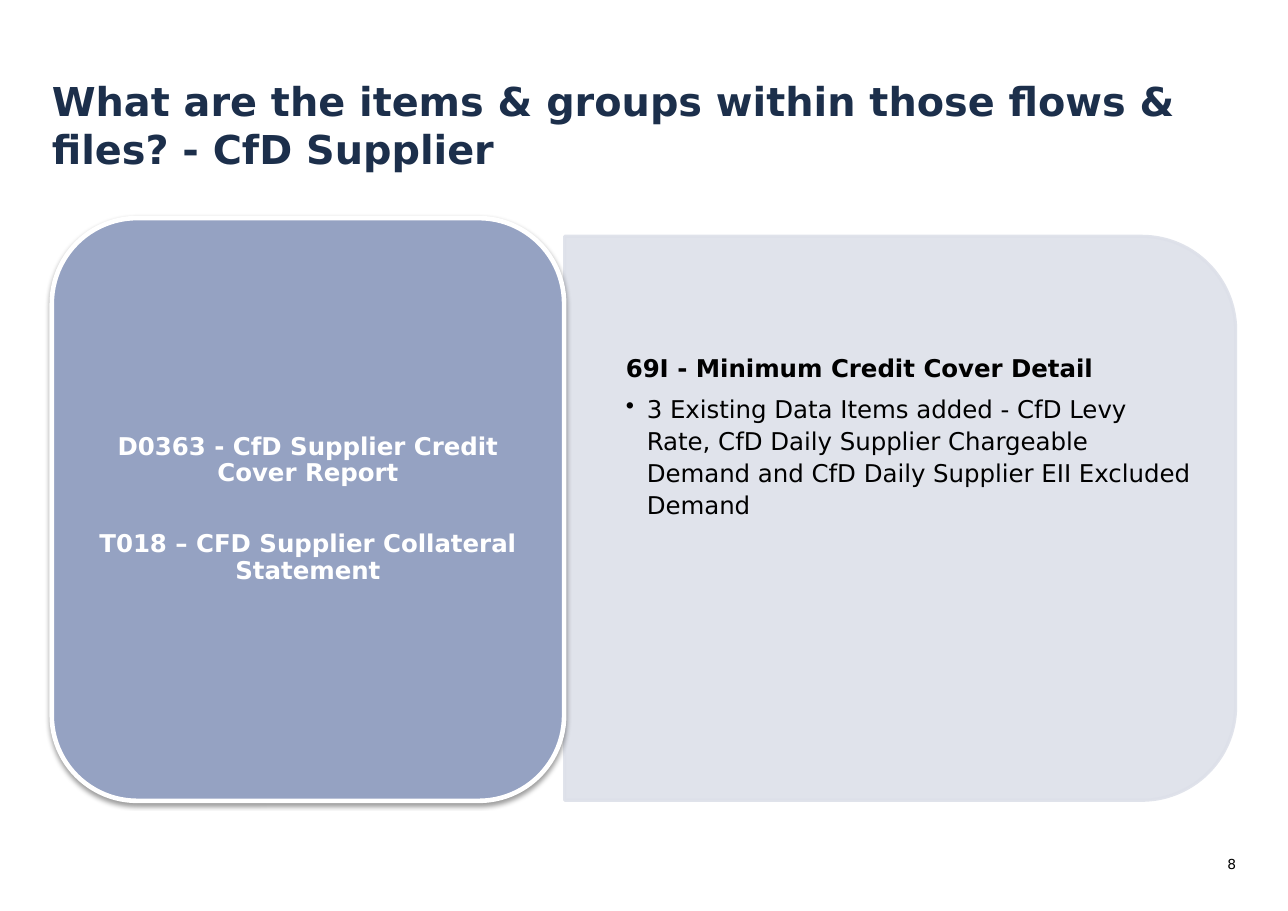
from lxml.etree import SubElement as Sub
from pptx import Presentation as Deck
from pptx.dml.color import RGBColor as Rgb
from pptx.enum.shapes import MSO_SHAPE as Kind
from pptx.enum.text import MSO_ANCHOR as Anchor, PP_ALIGN as Align
from pptx.oxml.ns import qn
from pptx.util import Inches, Pt

HUES = {"navy": "1C2F4B", "black": "000000", "white": "FFFFFF",
        "pale": "DDE0E9", "blue": "95A2C2"}


class Page:
    font = "DejaVu Sans"

    def __init__(self, slide):
        self.slide = slide

    def hue(self, name):
        return Rgb.from_string(HUES[name])

    def text(self, *place):
        box = self.slide.shapes.add_textbox(*map(Inches, place))
        return self.frame(box)

    def frame(self, box, side=0, edge=0, anchor=Anchor.TOP):
        frame = box.text_frame
        frame.word_wrap = True
        frame.margin_left = frame.margin_right = Inches(side)
        frame.margin_top = frame.margin_bottom = Inches(edge)
        frame.vertical_anchor = anchor
        return frame

    def para(self, frame, words, size, hue, bold=False, align=Align.LEFT,
             line=None, after=0, before=0, dot=False):
        first = frame.paragraphs[0]
        para = frame.add_paragraph() if first.runs else first
        if dot:
            props = para._p.get_or_add_pPr()
            props.set("marL", str(Inches(0.19)))
            props.set("indent", str(-Inches(0.19)))
            Sub(props, qn("a:buChar"), char="•")
        para.alignment = align
        para.line_spacing = line
        para.space_after = Pt(after)
        para.space_before = Pt(before)
        run = para.add_run()
        run.text = words
        run.font.name = self.font
        run.font.size = Pt(size)
        run.font.bold = bold
        run.font.color.rgb = self.hue(hue)

    def shape(self, kind, place, fill, edge, width, turn=0):
        shape = self.slide.shapes.add_shape(kind, *map(Inches, place))
        shape.rotation = turn
        shape.shadow.inherit = False
        shape.fill.solid()
        shape.fill.fore_color.rgb = self.hue(fill)
        shape.line.color.rgb = self.hue(edge)
        shape.line.width = Pt(width)
        return shape

    def fade(self, shape, share):
        for tint in shape._element.spPr.iter(qn("a:srgbClr")):
            Sub(tint, qn("a:alpha"), val=str(share * 1000))

    def shade(self, shape):
        node = shape._element.spPr.find(qn("a:effectLst"))
        cast = Sub(node, qn("a:outerShdw"), blurRad="40000", dist="20000",
                   dir="5400000", rotWithShape="0")
        tint = Sub(cast, qn("a:srgbClr"), val=HUES["black"])
        Sub(tint, qn("a:alpha"), val="38000")


def main():
    deck = Deck()
    deck.slide_width, deck.slide_height = Inches(11.69), Inches(8.27)
    page = Page(deck.slides.add_slide(deck.slide_layouts[6]))

    title = page.text(0.47, 0.69, 10.75, 0.9)
    page.para(title, "What are the items & groups within those flows & files? - CfD Supplier",
              26, "navy", bold=True, line=Pt(31.5))

    number = page.text(10.83, 7.77, 0.39, 0.2)
    page.para(number, "8", 9, "black", align=Align.RIGHT)

    panel = page.shape(Kind.ROUND_2_SAME_RECTANGLE, (5.61, 1.66, 5.12, 6.09),
                       "pale", "pale", 2, turn=90)
    page.fade(panel, 90)

    card = page.shape(Kind.ROUNDED_RECTANGLE, (0.47, 1.98, 4.65, 5.29),
                      "blue", "white", 3)
    page.shade(card)
    flows = page.frame(card, 0.07, 0.03, Anchor.MIDDLE)
    for words, gap in (("D0363 - CfD Supplier Credit Cover Report", 0),
                       ("T018 – CFD Supplier Collateral Statement", 29)):
        page.para(flows, words, 16, "white", bold=True, align=Align.CENTER,
                  line=0.9, before=gap)

    items = page.text(5.68, 3.18, 5.15, 1.56)
    for words, head in (
            ("69I - Minimum Credit Cover Detail", True),
            ("3 Existing Data Items added - CfD Levy Rate, CfD Daily Supplier "
             "Chargeable Demand and CfD Daily Supplier EII Excluded Demand", False)):
        page.para(items, words, 16, "black", bold=head, line=Pt(21),
                  after=5.6, dot=not head)

    deck.save("out.pptx")


if __name__ == "__main__":
    main()
